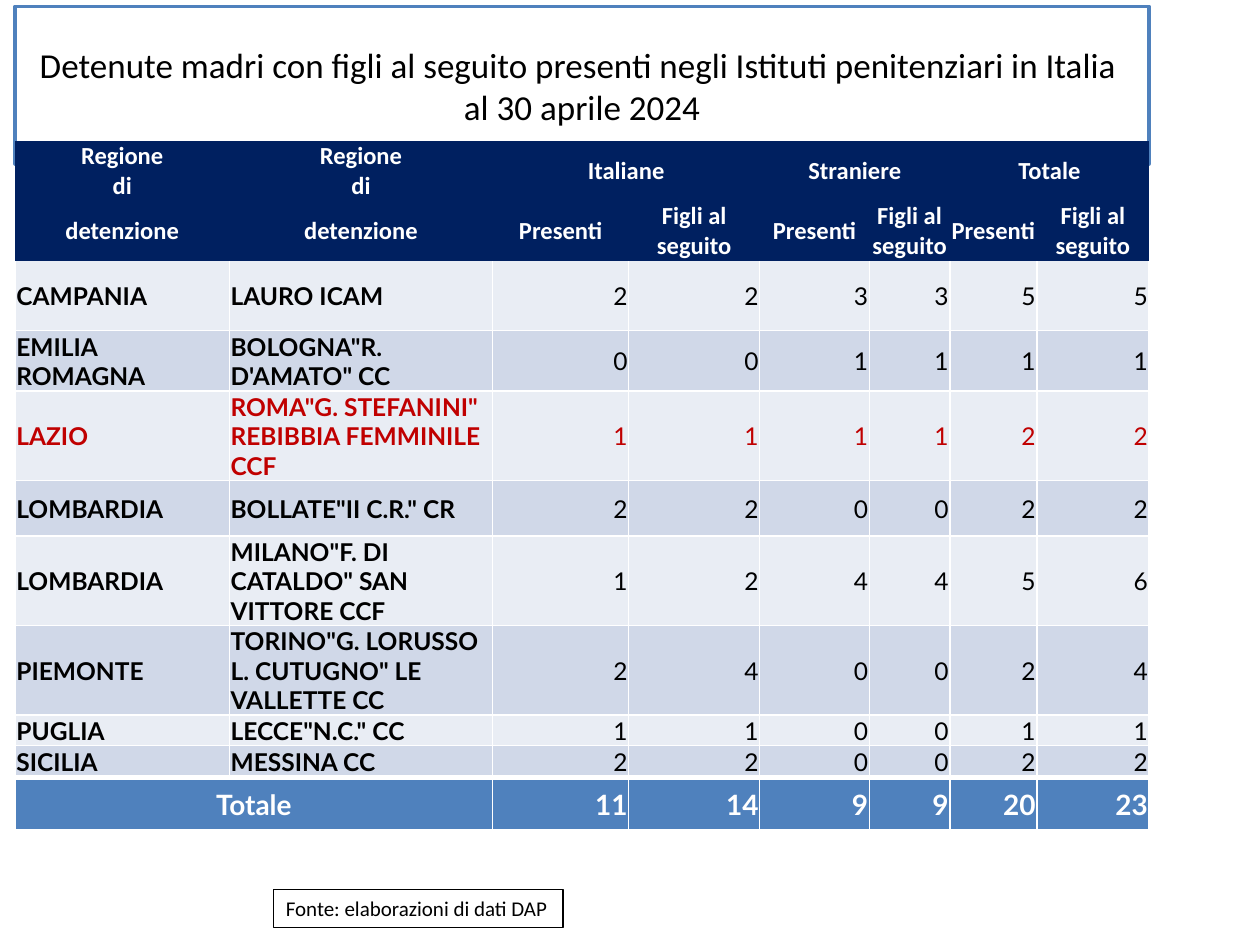
from lxml import etree
from pptx import Presentation
from pptx.dml.color import RGBColor
from pptx.enum.shapes import MSO_SHAPE
from pptx.enum.text import MSO_ANCHOR, PP_ALIGN
from pptx.oxml.ns import qn
from pptx.util import Inches, Pt

RECTANGLE = MSO_SHAPE.RECTANGLE
MIDDLE, TOP = MSO_ANCHOR.MIDDLE, MSO_ANCHOR.TOP
LEFT, CENTER, RIGHT = PP_ALIGN.LEFT, PP_ALIGN.CENTER, PP_ALIGN.RIGHT

WHITE = RGBColor(0xFF, 0xFF, 0xFF)
BLACK = RGBColor(0, 0, 0)
NAVY = RGBColor(0x00, 0x20, 0x60)
BLUE = RGBColor(0x4F, 0x81, 0xBD)
RED = RGBColor(0xC0, 0, 0)
BANDS = RGBColor(0xE9, 0xED, 0xF4), RGBColor(0xD0, 0xD8, 0xE8)

# Grid of the table, in inches
TABLE_LEFT, TABLE_TOP = 0.12, 1.12
COLUMN_WIDTHS = [1.7, 2.09, 1.08, 1.04, 0.87, 0.64, 0.69, 0.89]
ROW_HEIGHTS = [0.24, 0.24, 0.47, 0.55, 0.48, 0.71,
               0.44, 0.71, 0.71, 0.24, 0.25, 0.42]

GROUPS = ["Italiane", "Straniere", "Totale"]
HEADER_WORDS = ["Regione", "di", "detenzione"]
INSTITUTES = [
    ("CAMPANIA", "LAURO ICAM", 2, 2, 3, 3, 5, 5),
    ("EMILIA ROMAGNA", "BOLOGNA\"R. D'AMATO\" CC", 0, 0, 1, 1, 1, 1),
    ("LAZIO", "ROMA\"G. STEFANINI\" REBIBBIA FEMMINILE CCF", 1, 1, 1, 1, 2, 2),
    ("LOMBARDIA", "BOLLATE\"II C.R.\" CR", 2, 2, 0, 0, 2, 2),
    ("LOMBARDIA", "MILANO\"F. DI CATALDO\" SAN VITTORE CCF", 1, 2, 4, 4, 5, 6),
    ("PIEMONTE", "TORINO\"G. LORUSSO L. CUTUGNO\" LE VALLETTE CC", 2, 4, 0, 0, 2, 4),
    ("PUGLIA", "LECCE\"N.C.\" CC", 1, 1, 0, 0, 1, 1),
    ("SICILIA", "MESSINA CC", 2, 2, 0, 0, 2, 2),
]
HIGHLIGHTED_REGION = "LAZIO"
TOTALS = [11, 14, 9, 9, 20, 23]

HEADER_FONT = {"name": "Calibri", "size": Pt(14), "bold": True}
BODY_FONT = {"name": "Lato", "size": Pt(14)}
TOTAL_FONT = {"name": "Lato", "size": Pt(16), "bold": True}


def set_text(text_frame, text, alignment, color, font_values):
    text_frame.text = text
    for paragraph in text_frame.paragraphs:
        paragraph.alignment = alignment
        for run in paragraph.runs:
            run.font.color.rgb = color
            for name, value in font_values.items():
                setattr(run.font, name, value)


def add_box(slide, bounds, text, size, line, alignment, anchor, wrap):
    """Add a white outlined rectangle with text."""
    shape = slide.shapes.add_shape(RECTANGLE, *map(Inches, bounds))
    shape.shadow.inherit = False
    shape.fill.solid()
    shape.fill.fore_color.rgb = WHITE
    shape.line.color.rgb, shape.line.width = line
    shape.text_frame.word_wrap = wrap
    shape.text_frame.vertical_anchor = anchor
    set_text(shape.text_frame, text, alignment, BLACK,
             {"name": "Calibri", "size": Pt(size)})


def set_borders(cell, widths):
    """Draw white borders; a width of zero means no line."""
    properties = cell._tc.get_or_add_tcPr()
    for side, width in widths.items():
        line = etree.SubElement(properties, qn(f"a:ln{side}"), w=str(Pt(width)))
        if width:
            fill = etree.SubElement(line, qn("a:solidFill"))
            etree.SubElement(fill, qn("a:srgbClr"), val=str(WHITE))
        else:
            etree.SubElement(line, qn("a:noFill"))


def format_cell(cell, text, alignment, color, font_values, fill, inset, borders):
    margins = {"margin_left": inset, "margin_right": inset,
               "margin_top": inset, "margin_bottom": 0}
    for name, value in margins.items():
        setattr(cell, name, Inches(value))
    cell.vertical_anchor = MIDDLE
    set_borders(cell, borders)
    cell.fill.solid()
    cell.fill.fore_color.rgb = fill
    set_text(cell.text_frame, text, alignment, color, font_values)


def fill_header(table):
    rows = [[word, word] + [""] * 6 for word in HEADER_WORDS]
    for index, group in enumerate(GROUPS):
        column = 2 + 2 * index
        rows[0][column] = group
        rows[2][column:column + 2] = ["Presenti", "Figli al seguito"]
        table.cell(0, column).merge(table.cell(1, column + 1))
    for row, texts in enumerate(rows):
        for column, text in enumerate(texts):
            format_cell(table.cell(row, column), text, CENTER, WHITE, HEADER_FONT,
                        NAVY, 0, dict.fromkeys("LRTB", 0))


def fill_body(table):
    last = len(INSTITUTES) - 1
    for index, values in enumerate(INSTITUTES):
        color = RED if values[0] == HIGHLIGHTED_REGION else BLACK
        borders = {"L": 1, "R": 1, "T": 1 if index else 0,
                   "B": 3 if index == last else 1}
        for column, value in enumerate(values):
            is_name = column < 2
            format_cell(table.cell(len(HEADER_WORDS) + index, column), str(value),
                        LEFT if is_name else RIGHT, color,
                        BODY_FONT | {"bold": is_name}, BANDS[index % 2], 0.01, borders)


def fill_totals(table):
    row = len(ROW_HEIGHTS) - 1
    table.cell(row, 0).merge(table.cell(row, 1))
    for column, value in enumerate(["Totale", ""] + TOTALS):
        format_cell(table.cell(row, column), str(value), RIGHT if column else CENTER,
                    WHITE, TOTAL_FONT, BLUE, 0.01, {"L": 1, "R": 1, "T": 3, "B": 1})


def add_data_table(slide):
    bounds = TABLE_LEFT, TABLE_TOP, sum(COLUMN_WIDTHS), sum(ROW_HEIGHTS)
    table = slide.shapes.add_table(len(ROW_HEIGHTS), len(COLUMN_WIDTHS),
                                   *map(Inches, bounds)).table
    table.first_row = table.horz_banding = False
    for column, width in zip(table.columns, COLUMN_WIDTHS):
        column.width = Inches(width)
    for row, height in zip(table.rows, ROW_HEIGHTS):
        row.height = Inches(height)
    fill_header(table)
    fill_body(table)
    fill_totals(table)


def main():
    presentation = Presentation()
    presentation.slide_width, presentation.slide_height = Inches(10), Inches(7.5)
    slide = presentation.slides.add_slide(presentation.slide_layouts[6])

    # Title
    add_box(slide, (TABLE_LEFT, 0.05, 9, 1.25),
            "Detenute madri con figli al seguito presenti negli Istituti "
            "penitenziari in Italia \val 30 aprile 2024",
            20, (BLUE, Pt(2)), CENTER, MIDDLE, True)
    # Data by region and institute
    add_data_table(slide)
    # Source note
    add_box(slide, (2.17, 7.06, 2.3, 0.3), "Fonte: elaborazioni di dati DAP",
            12, (BLACK, Pt(0.75)), LEFT, TOP, False)

    presentation.save("out.pptx")


if __name__ == "__main__":
    main()
